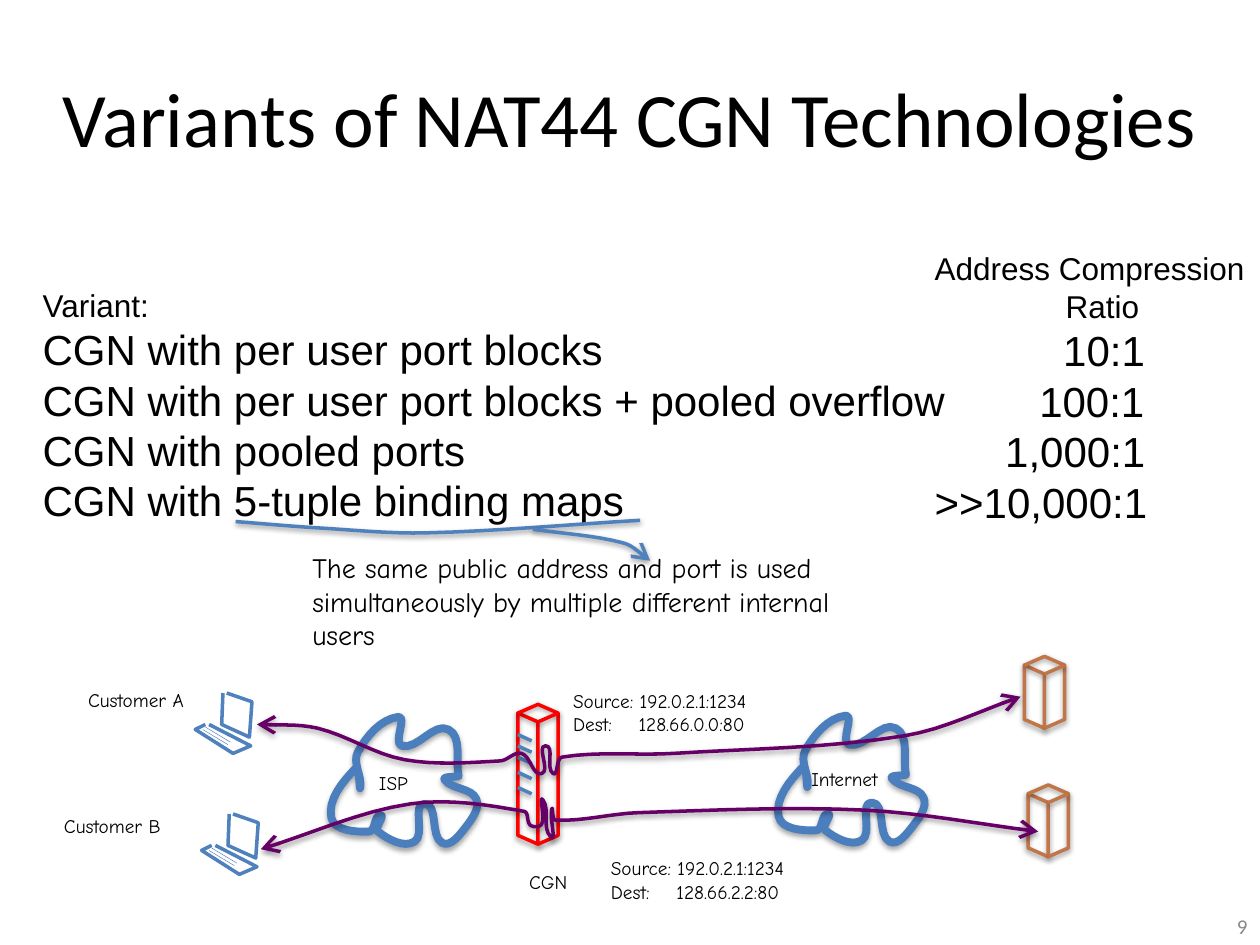
from lxml.etree import SubElement
from pptx import Presentation
from pptx.dml.color import RGBColor
from pptx.enum.text import MSO_ANCHOR as Anchor, PP_ALIGN as Align
from pptx.oxml.ns import qn
from pptx.util import Inches, Pt

BLUE, CLOUD_BLUE, RED, BROWN, PURPLE, BLACK = (
    "4F81BD", "4B7EBC", "FF0000", "C1764A", "660066", "000000")
STEPS = 8

TITLE = "Variants of NAT44 CGN Technologies"
VARIANTS = [
    ("Variant:", 18),
    ("CGN with per user port blocks", 24),
    ("CGN with per user port blocks + pooled overflow", 24),
    ("CGN with pooled ports", 24),
    ("CGN with 5-tuple binding maps", 24),
]
RATIOS = [
    ("Address Compression", 18, 0),
    ("Ratio", 18, 1.04),
    ("10:1", 24, 1.02),
    ("100:1", 24, 0.83),
    ("1,000:1", 24, 0.56),
    (">>10,000:1", 24, 0),
]
NOTE = ["The same public address and port is used",
        "simultaneously by multiple different internal", "users"]
LABELS = [
    ((2.91, 6.07, 0.5, 0.29), ["ISP"]),
    ((6.34, 6.04, 0.85, 0.29), ["Internet"]),
    ((4.1, 6.86, 0.65, 0.29), ["CGN"]),
    ((0.6, 5.41, 1.19, 0.29), ["Customer A"]),
    ((0.41, 6.41, 1.24, 0.29), ["Customer B"]),
    ((4.45, 5.42, 2.14, 0.47), ["Source: 192.0.2.1:1234", "Dest:\t128.66.0.0:80"]),
    ((4.75, 6.75, 2.14, 0.47), ["Source: 192.0.2.1:1234", "Dest:\t128.66.2.2:80"]),
]

LAPTOPS = [(1.55, 5.5), (1.6, 6.46)]
SCREEN = [(0.25, 0), (0.45, 0.07), (0.43, 0.35), (0.21, 0.25), (0.22, 0)]
BASE = [(0.11, 0.25), (0.44, 0.42), (0.3, 0.48), (0, 0.29), (0.08, 0.25)]
KEYS = [[(0.06, 0.29), (0.26, 0.41)], [(0.08, 0.27), (0.28, 0.39)]]

SERVERS = [(8.13, 5.28), (8.16, 6.3)]
SERVER_HEIGHT = 0.43
CGN, CGN_HEIGHT = (4.11, 5.66), 0.97
SLOT_TOPS = [5.83, 5.92, 6.01, 6.13, 6.25]
BOX_WIDTH, BOX_SLANT = 0.16, 0.07

CLOUDS = [(2.63, 5.69), (6.18, 5.68)]
CLOUD = [
    (1.01, 0.47), (0.93, 0.1), (0.56, 0.23), (0.53, 0), (0.21, 0.28), (0.23, 0.56),
    (0.19, 0.41), (0, 0.8), (0.3, 0.91), (0.39, 0.78), (0.37, 0.91), (0.66, 0.99),
    (0.74, 0.69), (0.88, 1), (1.07, 0.87), (1.15, 0.65), (0.9, 0.5), (1.01, 0.47),
]
FLOWS = [
    [(2.04, 5.75), (2.52, 5.78), (3.21, 6.03), (3.97, 6.04), (4.14, 5.98), (4.3, 6.14),
     (4.33, 5.92), (4.39, 6.14), (4.46, 6.01), (5.35, 5.98), (7.18, 5.84), (8.1, 5.53)],
    [(2.07, 6.74), (3.26, 6.38), (4.16, 6.44), (4.21, 6.55), (4.3, 6.54), (4.31, 6.35),
     (4.37, 6.64), (4.38, 6.42), (4.41, 6.51), (5.07, 6.45), (6.86, 6.43), (8.24, 6.6)],
]
UNDERLINE = [(1.87, 4.14), (2.52, 4.19), (3.38, 4.23), (5.08, 4.13)]
NOTE_ARROW = [(4.23, 4.2), (4.95, 4.31), (5.16, 4.45)]


def rgb(code):
    return RGBColor.from_string(code)


def shift(points, corner):
    return [(x + corner[0], y + corner[1]) for x, y in points]


def smooth(points):
    knots = [complex(*point) for point in points]
    around = [knots[0], *knots, knots[-1]]
    aims = [(after - before) / (abs(after - before) or 1)
            for before, after in zip(around, around[2:])]
    curve = [knots[0]]
    for a, b, aim_a, aim_b in zip(knots, knots[1:], aims, aims[1:]):
        reach = abs(b - a) / 3
        c, d = a + aim_a * reach, b - aim_b * reach
        for i in range(1, STEPS + 1):
            t, u = i / STEPS, 1 - i / STEPS
            curve.append(a * u**3 + 3 * c * u * u * t + 3 * d * u * t * t + b * t**3)
    return [(point.real, point.imag) for point in curve]


def draw(slide, points, color, width=2, shadow=38, arrows=()):
    corners = [(Inches(x), Inches(y)) for x, y in points]
    builder = slide.shapes.build_freeform(*corners[0])
    builder.add_line_segments(corners[1:], close=False)
    stroke = builder.convert_to_shape()
    stroke.fill.background()
    stroke.line.color.rgb = rgb(color)
    stroke.line.width = Pt(width)
    for end in arrows:
        SubElement(stroke.line._ln, qn(f"a:{end}"), type="arrow", w="lg", len="lg")
    stroke.shadow.inherit = False
    if shadow:
        effects = stroke._element.spPr.find(qn("a:effectLst"))
        outer = SubElement(effects, qn("a:outerShdw"), blurRad=str(Pt(3.1)),
                           dist=str(Pt(1.6)), dir="5400000", rotWithShape="0")
        black = SubElement(outer, qn("a:srgbClr"), val=BLACK)
        SubElement(black, qn("a:alpha"), val=str(shadow * 1000))


def draw_box(slide, corner, height, color):
    w, s = BOX_WIDTH, BOX_SLANT
    front = [(0, 0), (w, s), (w, s + height), (0, height), (0, 0)]
    back = [(0, 0), (w, -s), (2 * w, 0), (2 * w, height), (w, s + height)]
    for side in (front, back, [(w, s), (2 * w, 0)]):
        draw(slide, shift(side, corner), color)


def style(paragraph, size, font, color=BLACK, align=Align.LEFT):
    paragraph.alignment = align
    for run in paragraph.runs:
        run.font.size, run.font.name, run.font.color.rgb = Pt(size), font, rgb(color)


def write(slide, box, lines, font, color=BLACK, align=Align.LEFT):
    frame = slide.shapes.add_textbox(*map(Inches, box)).text_frame
    frame.word_wrap = True
    frame.text = "\n".join(line[0] for line in lines)
    for paragraph, (words, size, *indent) in zip(frame.paragraphs, lines):
        style(paragraph, size, font, color, align)
        props = paragraph._p.get_or_add_pPr()
        if indent:
            props.set("marL", str(Inches(indent[0])))
        if "\t" in words:
            tabs = SubElement(props, qn("a:tabLst"))
            SubElement(tabs, qn("a:tab"), pos=str(Inches(0.52)), algn="l")
    return frame


def main():
    deck = Presentation()
    deck.slide_width, deck.slide_height = Inches(10), Inches(7.5)
    slide = deck.slides.add_slide(deck.slide_layouts[5])
    title = slide.shapes.title
    title.left, title.top, title.width, title.height = map(Inches, (0.29, 0.3, 9.42, 1.25))
    title.text_frame.text = TITLE
    title.text_frame.vertical_anchor = Anchor.MIDDLE
    style(title.text_frame.paragraphs[0], 44, "Calibri", align=Align.CENTER)

    write(slide, (0.24, 2.22, 7.45, 2.02), VARIANTS, "Arial")
    write(slide, (7.32, 1.93, 2.7, 2.32), RATIOS, "Arial")
    write(slide, (2.38, 4.32, 5.78, 0.91), [(line, 16) for line in NOTE], "Comic Neue")
    number = write(slide, (7.67, 7.15, 2.33, 0.4), [("9", 12)], "Calibri", "898989", Align.RIGHT)
    number.vertical_anchor = Anchor.MIDDLE

    for corner in LAPTOPS:
        for part in (SCREEN, BASE):
            draw(slide, shift(part, corner), BLUE, shadow=0)
        for row in KEYS:
            draw(slide, shift(row, corner), BLUE, width=0.25, shadow=0)
    draw_box(slide, CGN, CGN_HEIGHT, RED)
    for top in SLOT_TOPS:
        draw(slide, [(CGN[0], top), (CGN[0] + 0.11, top + 0.05)], BLUE)
    for corner in CLOUDS:
        draw(slide, smooth(shift(CLOUD, corner)), CLOUD_BLUE, width=4.5, shadow=35)
    for corner in SERVERS:
        draw_box(slide, corner, SERVER_HEIGHT, BROWN)
    for flow in FLOWS:
        draw(slide, smooth(flow), PURPLE, arrows=("headEnd", "tailEnd"))
    draw(slide, smooth(UNDERLINE), BLUE)
    draw(slide, smooth(NOTE_ARROW), BLUE, arrows=("tailEnd",))
    for box, lines in LABELS:
        write(slide, box, [(line, 11) for line in lines], "Comic Neue")
    deck.save("out.pptx")


if __name__ == "__main__":
    main()
